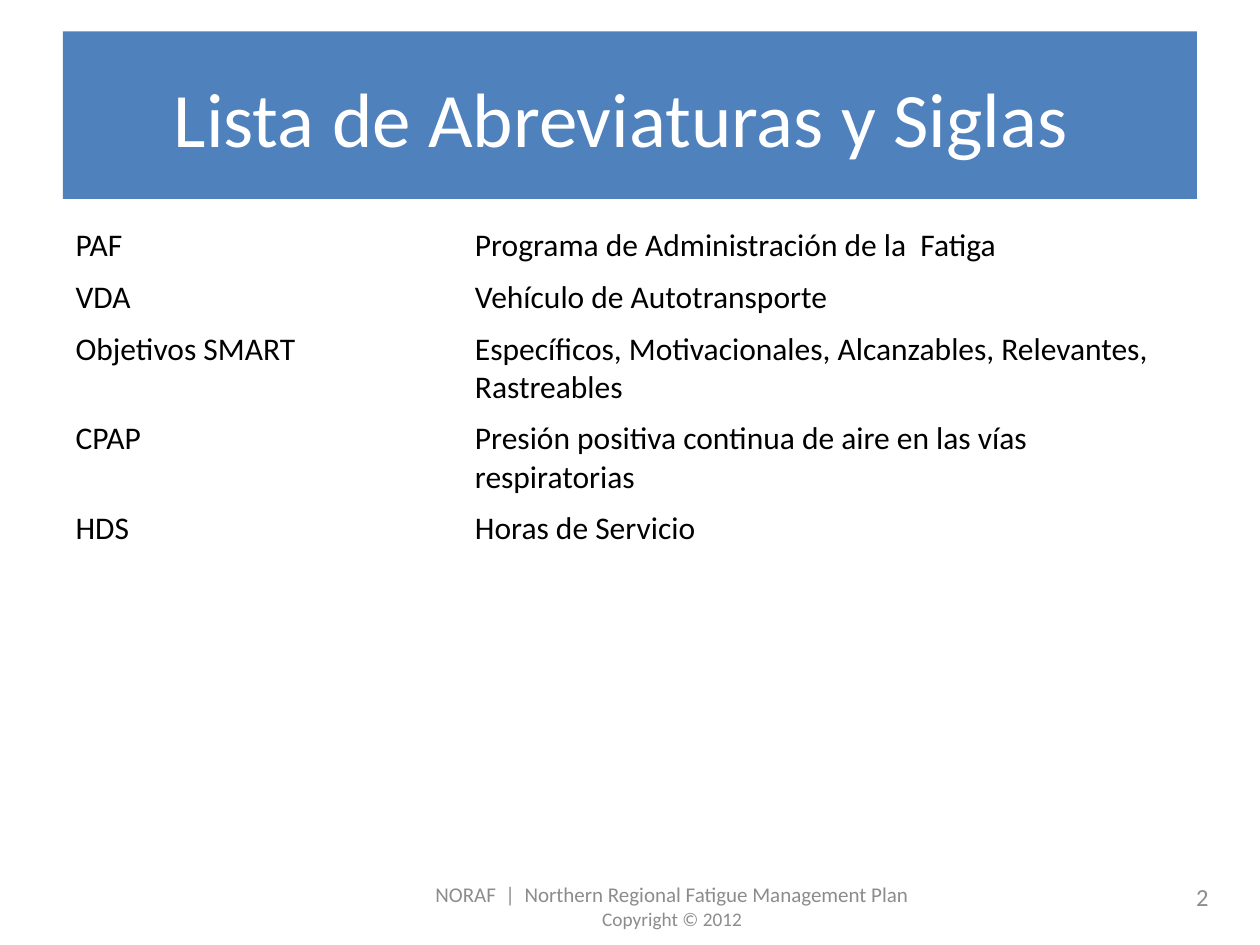
from dataclasses import dataclass

from pptx import Presentation
from pptx.dml.color import RGBColor
from pptx.enum.shapes import MSO_SHAPE
from pptx.enum.text import MSO_ANCHOR as Anchor, PP_ALIGN as Align
from pptx.util import Inches, Pt


@dataclass(frozen=True)
class Theme:
    font: str = "Calibri"
    banner: str = "4F81BD"
    title: str = "FFFFFF"
    body: str = "000000"
    muted: str = "8C8C8C"
    title_size: int = 44
    body_size: int = 18
    number_size: int = 14
    footer_size: int = 12
    copyright_size: int = 11


theme = Theme()


def write(frame, text, *, size, color, align=Align.LEFT, anchor=Anchor.MIDDLE, new=False):
    """Write one paragraph; new=True adds it below the existing text."""
    frame.word_wrap = True
    frame.vertical_anchor = anchor
    paragraph = frame.add_paragraph() if new else frame.paragraphs[0]
    paragraph.alignment = align
    run = paragraph.add_run()
    run.text = text
    run.font.name = theme.font
    run.font.size = Pt(size)
    run.font.color.rgb = RGBColor.from_string(color)


deck = Presentation()
deck.slide_width, deck.slide_height = Inches(10), Inches(7.5)
slide = deck.slides.add_slide(deck.slide_layouts[5])
shapes = slide.shapes
margin, content_width = Inches(0.5), Inches(9)

# Footer and page number
footer = shapes.add_textbox(Inches(3), Inches(7), Inches(4.67), Inches(0.38)).text_frame
write(footer, "NORAF  |  Northern Regional Fatigue Management Plan",
      size=theme.footer_size, color=theme.muted, align=Align.CENTER)
write(footer, "Copyright © 2012", size=theme.copyright_size, color=theme.muted,
      align=Align.CENTER, new=True)

page_number = shapes.add_textbox(Inches(7.36), Inches(6.92), Inches(2.33), Inches(0.4))
write(page_number.text_frame, "2", size=theme.number_size, color=theme.muted, align=Align.RIGHT)

# Title on its banner
banner = shapes.add_shape(MSO_SHAPE.RECTANGLE, margin, Inches(0.25), content_width, Inches(1.33))
banner.shadow.inherit = False
banner.fill.solid()
banner.fill.fore_color.rgb = RGBColor.from_string(theme.banner)
banner.line.fill.background()

title = shapes.title
title.left, title.top = margin, Inches(0.3)
title.width, title.height = content_width, Inches(1.25)
write(title.text_frame, "Lista de Abreviaturas y Siglas ",
      size=theme.title_size, color=theme.title, align=Align.CENTER)
banner.element.addnext(title.element)  # bring the title in front of the banner

# Abbreviations and their meanings
abbreviations = [
    ("PAF", "Programa de Administración de la  Fatiga"),
    ("VDA", "Vehículo de Autotransporte"),
    ("Objetivos SMART", "Específicos, Motivacionales, Alcanzables, Relevantes, Rastreables"),
    ("CPAP", "Presión positiva continua de aire en las vías respiratorias"),
    ("HDS", "Horas de Servicio"),
]
row_height = Inches(0.41)
glossary = shapes.add_table(len(abbreviations), 2, margin, Inches(1.75),
                            content_width, row_height * len(abbreviations)).table
glossary.first_row = glossary.horz_banding = False
for column, width in zip(glossary.columns, (3.17, 5.83)):
    column.width = Inches(width)
for row, entry in zip(glossary.rows, abbreviations):
    row.height = row_height
    for cell, text in zip(row.cells, entry):
        cell.fill.background()
        write(cell.text_frame, text, size=theme.body_size, color=theme.body, anchor=Anchor.TOP)

deck.save("out.pptx")
